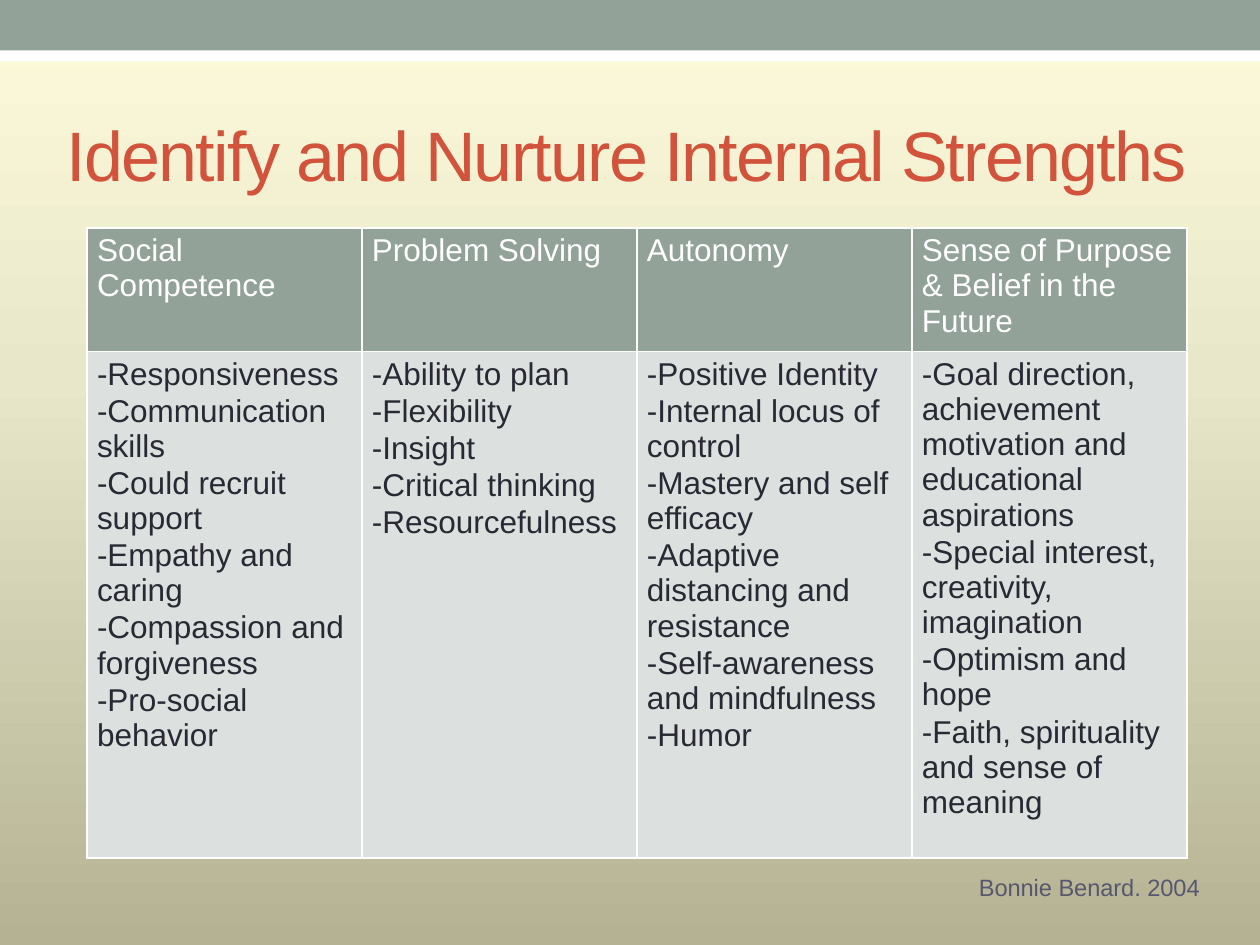
import copy
import dataclasses
import lxml.etree
import pptx
import pptx.dml.color
import pptx.enum.shapes
import pptx.enum.text
import pptx.oxml.ns
import pptx.util

Inches = pptx.util.Inches
Pt = pptx.util.Pt
RGB = pptx.dml.color.RGBColor.from_string
qn = pptx.oxml.ns.qn


@dataclasses.dataclass(frozen=True)
class Theme:
    """Colours and type sizes of the slide."""
    font: str = "Arial"
    sage: str = "93A299"
    white: str = "FFFFFF"
    pale: str = "DCE0DE"
    ink: str = "292934"
    red: str = "D2533C"
    slate: str = "57576E"
    fade: tuple = ((0, "FDFBDA"), (0.4, "E8E7CA"), (1, "B4B293"))
    head: float = 40
    text: float = 18
    note: float = 13.5


THEME = Theme()
TITLE = "Identify and Nurture Internal Strengths"
SOURCE = "Bonnie Benard. 2004"
TRAITS = {
    "Social Competence": [
        "-Responsiveness", "-Communication skills", "-Could recruit support",
        "-Empathy and caring", "-Compassion and forgiveness",
        "-Pro-social behavior"],
    "Problem Solving": [
        "-Ability to plan", "-Flexibility", "-Insight", "-Critical thinking",
        "-Resourcefulness"],
    "Autonomy": [
        "-Positive Identity", "-Internal locus of control",
        "-Mastery and self efficacy", "-Adaptive distancing and resistance",
        "-Self-awareness and mindfulness", "-Humor"],
    "Sense of Purpose & Belief in the Future": [
        "-Goal direction, achievement motivation and educational aspirations",
        "-Special interest, creativity, imagination", "-Optimism and hope",
        "-Faith, spirituality and sense of meaning"],
}


def apply(item, form):
    """Set each attribute named in a dict of format values."""
    for name, value in form.items():
        setattr(item, name, value)


def box(left, top, width, height):
    """Turn four inch values into lengths."""
    return tuple(Inches(n) for n in (left, top, width, height))


def write(frame, lines, size, tint, after=0):
    """Fill a text frame with one paragraph per line."""
    frame.text = "\n".join(lines)
    for para in frame.paragraphs:
        apply(para, {"alignment": pptx.enum.text.PP_ALIGN.LEFT,
                     "space_before": Pt(0), "space_after": Pt(after)})
        for run in para.runs:
            apply(run.font, {"name": THEME.font, "size": Pt(size)})
            run.font.color.rgb = RGB(tint)


def backdrop(slide):
    """Shade the background from light at the top to dark below."""
    fill = slide.background.fill
    fill.gradient()
    fill.gradient_angle = 270
    stops = slide.element.find(".//" + qn("a:gsLst"))
    stops.insert(1, copy.deepcopy(stops[0]))
    for stop, (place, tint) in zip(fill.gradient_stops, THEME.fade):
        stop.position = place
        stop.color.rgb = RGB(tint)


def band(slide, area, tint):
    """Draw one plain band."""
    shape = slide.shapes.add_shape(
        pptx.enum.shapes.MSO_SHAPE.RECTANGLE, *area)
    shape.shadow.inherit = False
    shape.fill.solid()
    shape.fill.fore_color.rgb = RGB(tint)
    shape.line.fill.background()


def heading(slide, area):
    """Place and format the title."""
    title = slide.shapes.title
    apply(title, dict(zip(("left", "top", "width", "height"), area)))
    frame = title.text_frame
    apply(frame, {"word_wrap": True,
                  "auto_size": pptx.enum.text.MSO_AUTO_SIZE.NONE,
                  "vertical_anchor": pptx.enum.text.MSO_ANCHOR.MIDDLE})
    write(frame, [TITLE], THEME.head, THEME.red)
    for run in frame.paragraphs[0].runs:
        run.font._element.set("spc", "-100")


def border(cell):
    """Rule all four sides of a cell in white."""
    props = cell._tc.get_or_add_tcPr()
    for side in ("a:lnL", "a:lnR", "a:lnT", "a:lnB"):
        line = lxml.etree.SubElement(props, qn(side), w=str(Pt(1)))
        fill = lxml.etree.SubElement(line, qn("a:solidFill"))
        lxml.etree.SubElement(fill, qn("a:srgbClr"), val=THEME.white)


def paint(cell, lines, back, tint, after):
    """Fill, rule and write one cell."""
    border(cell)
    cell.fill.solid()
    cell.fill.fore_color.rgb = RGB(back)
    apply(cell, {"margin_left": Inches(0.08), "margin_right": Inches(0.08),
                 "margin_top": Inches(0.04), "margin_bottom": Inches(0.04)})
    write(cell.text_frame, lines, THEME.text, tint, after)


def grid(slide, area, top):
    """Lay out the traits, one column for each strength."""
    table = slide.shapes.add_table(2, len(TRAITS), *area).table
    for row, height in zip(table.rows, (top, area[3] - top)):
        row.height = height
    for col, (name, items) in enumerate(TRAITS.items()):
        table.columns[col].width = area[2] // len(TRAITS)
        paint(table.cell(0, col), [name], THEME.sage, THEME.white, 0)
        paint(table.cell(1, col), items, THEME.pale, THEME.ink, 1)


def credit(slide, area):
    """Name the author below the table."""
    frame = slide.shapes.add_textbox(*area).text_frame
    frame.word_wrap = False
    write(frame, [SOURCE], THEME.note, THEME.slate)


def main():
    """Build and save the slide."""
    deck = pptx.Presentation()
    apply(deck, {"slide_width": Inches(10), "slide_height": Inches(7.5)})
    slide = deck.slides.add_slide(deck.slide_layouts[5])
    backdrop(slide)
    band(slide, box(0, 0.24, 10, 0.25), THEME.white)
    band(slide, box(0, 0, 10, 0.4), THEME.sage)
    heading(slide, box(0.43, 0.62, 9.15, 1.19))
    grid(slide, box(0.69, 1.81, 8.73, 5), Inches(0.98))
    credit(slide, box(7.67, 6.88, 1.98, 0.33))
    deck.save("out.pptx")


if __name__ == "__main__":
    main()
